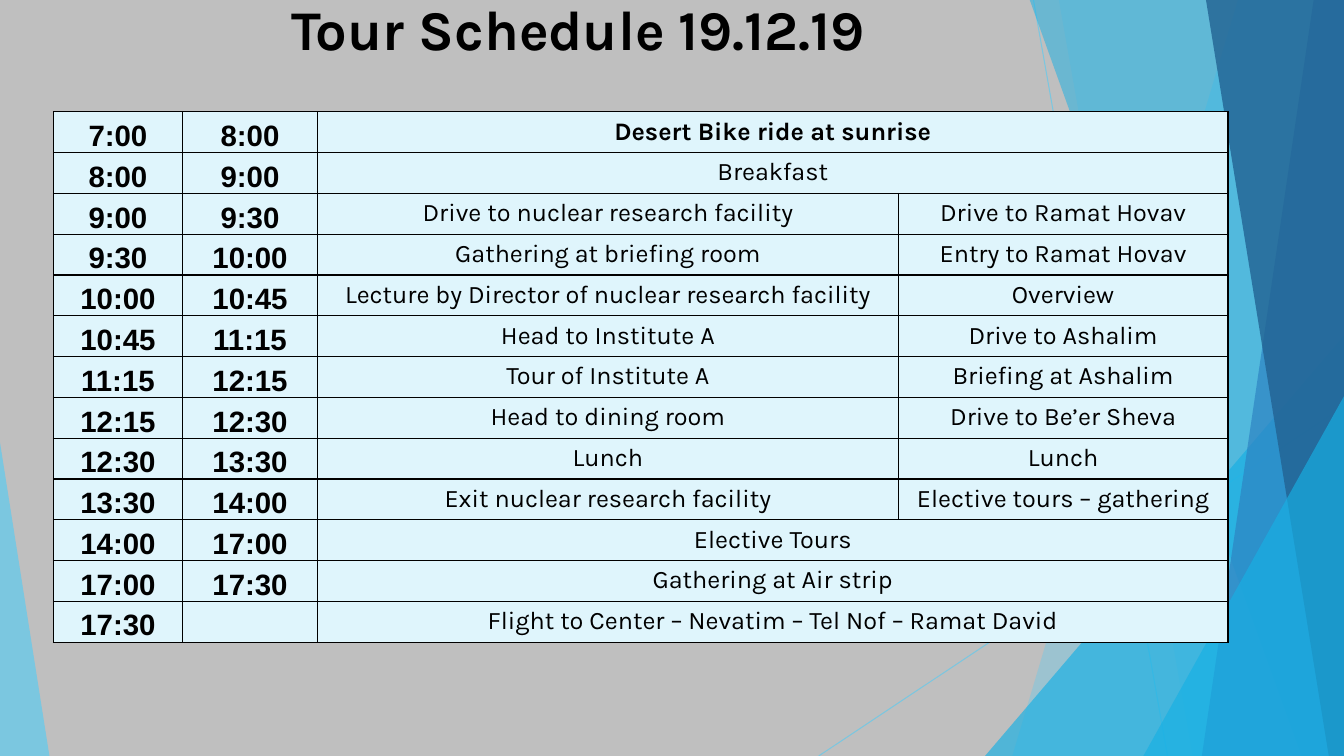
from lxml import etree
from pptx import Presentation
from pptx import util as u
from pptx.dml.color import RGBColor
from pptx.enum import shapes, text
from pptx.oxml.ns import qn

PX = 4572  # EMU in one px, 200 px to the inch
WIDTH, HEIGHT = 2666, 1500
BLACK = "000000"
SKY, CYAN, BLUE, NAVY = "5FCBEF", "17B0E4", "2E83C3", "226292"

# start, end, activity, and the parallel activity where the group splits
SCHEDULE = [
    ("7:00", "8:00", "Desert Bike ride at sunrise"),
    ("8:00", "9:00", "Breakfast"),
    ("9:00", "9:30", "Drive to nuclear research facility", "Drive to Ramat Hovav"),
    ("9:30", "10:00", "Gathering at briefing room", "Entry to Ramat Hovav"),
    ("10:00", "10:45", "Lecture by Director of nuclear research facility", "Overview"),
    ("10:45", "11:15", "Head to Institute A", "Drive to Ashalim"),
    ("11:15", "12:15", "Tour of Institute A", "Briefing at Ashalim"),
    ("12:15", "12:30", "Head to dining room", "Drive to Be’er Sheva"),
    ("12:30", "13:30", "Lunch", "Lunch"),
    ("13:30", "14:00", "Exit nuclear research facility", "Elective tours – gathering"),
    ("14:00", "17:00", "Elective Tours"),
    ("17:00", "17:30", "Gathering at Air strip"),
    ("17:30", "", "Flight to Center – Nevatim – Tel Nof – Ramat David"),
]


def px(*lengths):
    return [u.Emu(length * PX) for length in lengths]


def paint(fill, color, opacity=100):
    fill.solid()
    fill.fore_color.rgb = RGBColor.from_string(color)
    if opacity < 100:
        # The colour element is the only child of the solid fill
        for solid in fill._xPr.iter(qn("a:solidFill")):
            etree.SubElement(solid[0], qn("a:alpha"), val=str(opacity * 1000))


def style_text(para, font_name, size, bold):
    for span in para.runs:
        span.font.name = font_name
        span.font.size = u.Pt(size)
        span.font.bold = bold
        span.font.color.rgb = RGBColor.from_string(BLACK)


def add_backdrop(page, left, top, width, height):
    right, bottom = left + width, top + height

    # Thin lines crossing at the right
    for x1, y1, x2, y2 in [(2050, 0, 2316, height), (width, 806, 1624, height)]:
        line = page.shapes.add_connector(
            shapes.MSO_CONNECTOR.STRAIGHT,
            *px(left + x1, top + y1, left + x2, top + y2))
        line.line.width = u.Pt(0.75)
        paint(line.line.fill, SKY, 70)
        etree.SubElement(line.element.spPr, qn("a:effectLst"))

    def finish(shape, color, opacity):
        paint(shape.fill, color, opacity)
        shape.line.fill.background()
        shape.shadow.inherit = False

    def band(top_x, bottom_x, color, opacity):
        # Slanted left edge, reaching the right side of the page
        builder = page.shapes.build_freeform(left + top_x, top - 2, scale=PX)
        builder.add_line_segments(
            [(right, top - 2), (right, bottom), (left + bottom_x, bottom)])
        finish(builder.convert_to_shape(), color, opacity)

    def corner(x, y, base, apex, color, opacity):
        # Triangle standing on the bottom of the page
        shape = page.shapes.add_shape(
            shapes.MSO_SHAPE.ISOSCELES_TRIANGLE,
            *px(left + x, top + y, base, height - y))
        shape.adjustments[0] = apex
        finish(shape, color, opacity)

    band(2456, 2008, SKY, 36)
    band(2100, 2366, SKY, 20)
    corner(1954, 666, 712, 1, CYAN, 66)
    band(2042, 2582, CYAN, 50)
    band(2606, 2384, BLUE, 70)
    band(2392, 2636, NAVY, 80)
    corner(2268, 786, 398, 1, CYAN, 66)
    corner(0, 878, 98, 0, SKY, 70)


def add_title(page, left, top, width, height):
    title = page.shapes.title
    title.left, title.top, title.width, title.height = px(left, top, width, height)
    frame = title.text_frame
    frame.text = "Tour Schedule 19.12.19"
    frame.word_wrap = True
    frame.auto_size = text.MSO_AUTO_SIZE.NONE
    frame.vertical_anchor = text.MSO_ANCHOR.MIDDLE
    para = frame.paragraphs[0]
    para.alignment = text.PP_ALIGN.LEFT
    para.line_spacing = 0.9
    style_text(para, "Karla", 40, True)
    page.shapes.element.append(title.element)  # in front of the backdrop


def set_borders(cell):
    properties = cell._tc.get_or_add_tcPr()
    for index, side in enumerate(("lnL", "lnR", "lnT", "lnB")):
        border = etree.Element(qn("a:" + side), w=str(u.Pt(1)))
        solid = etree.SubElement(border, qn("a:solidFill"))
        etree.SubElement(solid, qn("a:srgbClr"), val=BLACK)
        properties.insert(index, border)


def add_schedule(page, left, top, columns, row_height):
    table = page.shapes.add_table(
        len(SCHEDULE), len(columns),
        *px(left, top, sum(columns), row_height * len(SCHEDULE))).table
    for column, width in zip(table.columns, px(*columns)):
        column.width = width

    for r, entry in enumerate(SCHEDULE):
        table.rows[r].height = px(row_height)[0]
        for c in range(len(columns)):
            cell = table.cell(r, c)
            paint(cell.fill, "DFF5FC")
            set_borders(cell)
            if c >= len(entry):
                continue
            cell.text = entry[c]
            para = cell.text_frame.paragraphs[0]
            para.alignment = text.PP_ALIGN.CENTER
            if c < 2:
                cell.vertical_anchor = text.MSO_ANCHOR.BOTTOM
                cell.margin_left, cell.margin_right, cell.margin_top, cell.margin_bottom = px(2, 2, 2, 0)
                style_text(para, "Arial", 21, True)
            else:
                style_text(para, "Karla", 18, r == 0)
        if len(entry) == 3:
            table.cell(r, 2).merge(table.cell(r, 3))


def main():
    deck = Presentation()
    deck.slide_width, deck.slide_height = px(WIDTH, HEIGHT)
    page = deck.slides.add_slide(deck.slide_layouts.get_by_name("Title Only"))
    paint(page.background.fill, "BFBFBF")
    add_backdrop(page, 0, 0, WIDTH, HEIGHT)
    add_title(page, 558, -6, 1376, 142)
    add_schedule(page, 106, 222, (256, 268, 1152, 654), 81)
    deck.save("out.pptx")


if __name__ == "__main__":
    main()
